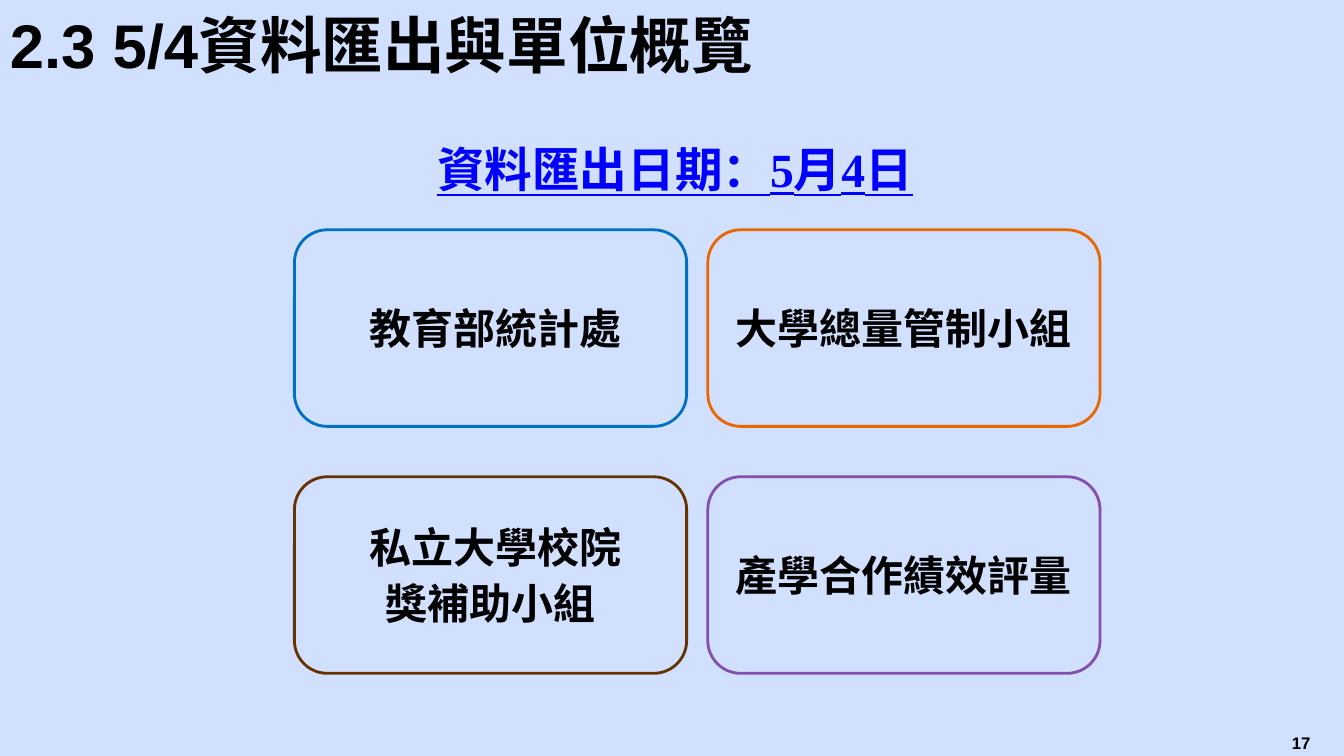
from pptx import Presentation
from pptx.dml.color import RGBColor
from pptx.enum.shapes import MSO_SHAPE as Shape
from pptx.enum.text import MSO_ANCHOR as Anchor, PP_ALIGN as Align
from pptx.oxml.ns import qn
from pptx.util import Inches, Pt
from lxml import etree

TITLE = "2.3 5/4資料匯出與單位概覽"
EXPORT_DATE = "資料匯出日期：5月4日"
PAGE_NUMBER = "17"
# Rows of the grid: (lines of the unit name, outline colour)
UNITS = [
    [([" 教育部統計處"], "blue"), (["大學總量管制小組"], "orange")],
    [([" 私立大學校院", "獎補助小組"], "brown"), (["產學合作績效評量"], "purple")],
]

COLORS = {
    "background": "D1E0FF", "text": "000000", "date": "0000FF",
    "blue": "0070C0", "orange": "EA6600", "brown": "663300", "purple": "844EAD",
}
CJK_FONT = "Noto Sans CJK TC"
GRID_LEFT, GRID_TOP = 2.92, 2.28
CARD_WIDTH, CARD_HEIGHT = 3.89, 1.95
COLUMN_STEP, ROW_STEP = 4.1, 2.45


def rgb(name):
    return RGBColor.from_string(COLORS[name])


def write(paragraph, text, size, latin, color="text", underline=None):
    """Add one bold run with its Latin and East Asian fonts."""
    run = paragraph.add_run()
    run.text = text
    font = run.font
    font.size, font.name, font.bold = Pt(size), latin, True
    font.underline = underline
    font.color.rgb = rgb(color)
    east_asian = etree.SubElement(run._r.get_or_add_rPr(), qn("a:ea"))
    east_asian.set("typeface", CJK_FONT)


def add_label(slide, left, top, width, height, anchor=Anchor.TOP):
    frame = slide.shapes.add_textbox(
        Inches(left), Inches(top), Inches(width), Inches(height)).text_frame
    frame.word_wrap = True
    frame.vertical_anchor = anchor
    return frame.paragraphs[0]


def add_unit(slide, left, top, lines, color):
    card = slide.shapes.add_shape(
        Shape.ROUNDED_RECTANGLE, Inches(left), Inches(top),
        Inches(CARD_WIDTH), Inches(CARD_HEIGHT))
    card.shadow.inherit = False
    card.fill.background()
    card.line.color.rgb = rgb(color)
    card.line.width = Pt(2)
    frame = card.text_frame
    frame.word_wrap = True
    frame.vertical_anchor = Anchor.MIDDLE
    for index, line in enumerate(lines):
        paragraph = frame.add_paragraph() if index else frame.paragraphs[0]
        paragraph.alignment = Align.CENTER
        paragraph.space_after = Pt(4)
        write(paragraph, line, 30, CJK_FONT)


def main():
    deck = Presentation()
    deck.slide_width, deck.slide_height = Inches(13.33), Inches(7.5)
    slide = deck.slides.add_slide(deck.slide_layouts[6])
    slide.background.fill.solid()
    slide.background.fill.fore_color.rgb = rgb("background")

    page = add_label(slide, 12.48, 7.22, 0.85, 0.28)
    page.alignment = Align.CENTER
    write(page, PAGE_NUMBER, 12, "Arial")

    title = add_label(slide, 0, 0.15, 9.27, 0.67, Anchor.MIDDLE)
    title.line_spacing = 0.9
    write(title, TITLE, 44, "Arial")

    date = add_label(slide, 1.92, 1.06, 9.55, 0.86)
    date.alignment = Align.CENTER
    date.line_spacing = 1.5
    write(date, EXPORT_DATE, 34, "Times New Roman", "date", True)

    for row, units in enumerate(UNITS):
        for column, (lines, color) in enumerate(units):
            add_unit(slide, GRID_LEFT + column * COLUMN_STEP,
                     GRID_TOP + row * ROW_STEP, lines, color)

    deck.save("out.pptx")


if __name__ == "__main__":
    main()
